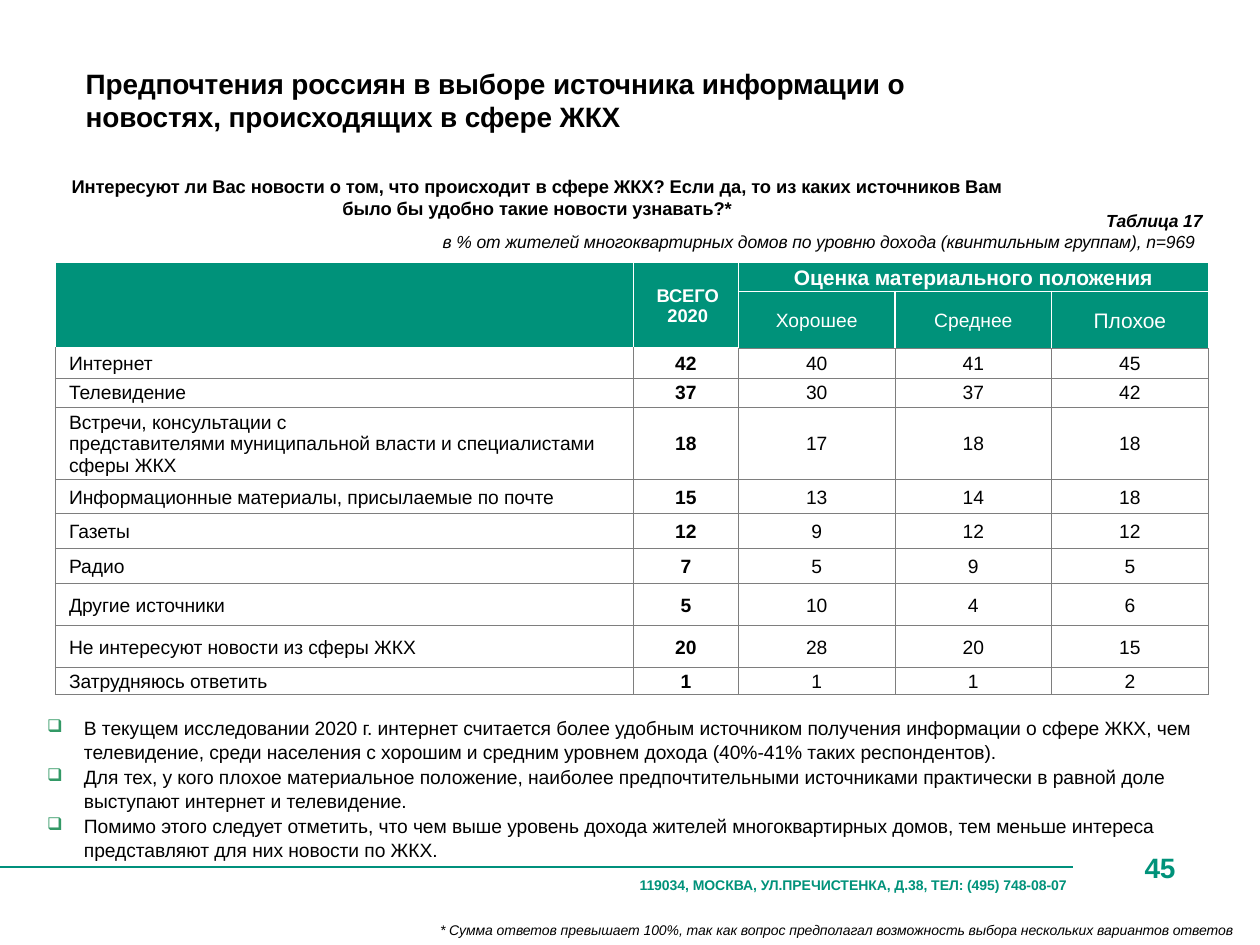
from lxml.etree import SubElement
from pptx import Presentation
from pptx.dml.color import RGBColor
from pptx.enum.shapes import MSO_CONNECTOR
from pptx.enum.text import MSO_ANCHOR as Anchor, PP_ALIGN as Align
from pptx.oxml.ns import qn
from pptx.util import Pt

COLORS = {
    "green": "00927A",
    "rule": "00907C",
    "bullet": "339966",
    "grid": "7E7E7E",
    "white": "FFFFFF",
    "black": "000000",
}
FONT = "Arial"
COLUMN_WIDTHS = [330.5, 60, 89.5, 89.5, 89.5]
HEADER_HEIGHTS = [16.5, 32.5]
INCOME_LEVELS = [("Хорошее", 11), ("Среднее", 11), ("Плохое", 12)]
# label lines, row height, values: total, good, average, bad
SOURCES = [
    (["Интернет"], 17, [42, 40, 41, 45]),
    (["Телевидение"], 16.5, [37, 30, 37, 42]),
    (["Встречи, консультации с",
      "представителями муниципальной власти и специалистами сферы ЖКХ"],
     41.5, [18, 17, 18, 18]),
    (["Информационные материалы, присылаемые по почте"], 19.5, [15, 13, 14, 18]),
    (["Газеты"], 20, [12, 9, 12, 12]),
    (["Радио"], 20, [7, 5, 9, 5]),
    (["Другие источники"], 24, [5, 10, 4, 6]),
    (["Не интересуют новости из сферы ЖКХ"], 24, [20, 28, 20, 15]),
    (["Затрудняюсь ответить"], 15.5, [1, 1, 1, 2]),
]
FINDINGS = [
    "В текущем исследовании 2020 г. интернет считается более удобным источником получения "
    "информации о сфере ЖКХ, чем телевидение, среди населения с хорошим и средним уровнем "
    "дохода (40%-41% таких респондентов).",
    "Для тех, у кого плохое материальное положение, наиболее предпочтительными источниками "
    "практически в равной доле выступают интернет и телевидение.",
    "Помимо этого следует отметить, что чем выше уровень дохода жителей многоквартирных "
    "домов, тем меньше интереса представляют для них новости по ЖКХ.",
]


def rgb(name):
    return RGBColor.from_string(COLORS[name])


def write(frame, lines, size, color="black", bold=False, italic=False,
          align=Align.LEFT, spacing=-5):
    """Fill a text frame, one paragraph a line; spacing is in hundredths of a point."""
    for index, line in enumerate(lines):
        paragraph = frame.paragraphs[0] if index == 0 else frame.add_paragraph()
        paragraph.alignment = align
        run = paragraph.add_run()
        run.text = line
        font = run.font
        font.name, font.size = FONT, Pt(size)
        font.bold, font.italic = bold, italic
        font.color.rgb = rgb(color)
        if spacing:
            run._r.get_or_add_rPr().set("spc", str(spacing))


def add_text(slide, box, lines, size, top_inset=0.9, **style):
    text_box = slide.shapes.add_textbox(*map(Pt, box))
    frame = text_box.text_frame
    frame.word_wrap = True
    frame.margin_left = frame.margin_right = frame.margin_bottom = 0
    frame.margin_top = Pt(top_inset)
    write(frame, lines, size, **style)
    return frame


def add_heading(slide, left, top):
    add_text(slide, (left + 13, top, 476, 40),
             ["Предпочтения россиян в выборе источника информации о новостях, "
              "происходящих в сфере ЖКХ"], 16, bold=True)
    add_text(slide, (left, top + 62, 542, 27),
             ["Интересуют ли Вас новости о том, что происходит в сфере ЖКХ? "
              "Если да, то из каких источников Вам",
              "было бы удобно такие новости узнавать?*"],
             10.5, bold=True, align=Align.CENTER, spacing=-3)
    add_text(slide, (left + 596, top + 82, 60, 13), ["Таблица 17"], 10,
             bold=True, italic=True)
    add_text(slide, (left + 217, top + 94, 440, 13),
             ["в % от жителей многоквартирных домов по уровню дохода "
              "(квинтильным группам), n=969"], 10, italic=True)


def set_borders(cell, sides):
    """Draw the borders given as {side: (colour, width in points)}."""
    properties = cell._tc.get_or_add_tcPr()
    for index, side in enumerate("LRTB"):
        color, width = sides[side]
        line = properties.makeelement(qn(f"a:ln{side}"), {"w": str(int(Pt(width)))})
        fill = SubElement(line, qn("a:solidFill"))
        SubElement(fill, qn("a:srgbClr"), val=COLORS[color])
        properties.insert(index, line)


def fill_cell(cell, lines, size, left=0, **style):
    cell.margin_left, cell.margin_top = Pt(left), Pt(1)
    cell.margin_right = cell.margin_bottom = 0
    cell.vertical_anchor = Anchor.MIDDLE
    write(cell.text_frame, lines, size, **style)


def add_source_table(slide, left, top):
    heights = HEADER_HEIGHTS + [height for _, height, _ in SOURCES]
    frame = slide.shapes.add_table(len(heights), len(COLUMN_WIDTHS), Pt(left), Pt(top),
                                   Pt(sum(COLUMN_WIDTHS)), Pt(sum(heights)))
    table = frame.table
    table.horz_banding = False
    for column, width in zip(table.columns, COLUMN_WIDTHS):
        column.width = Pt(width)
    for row, height in zip(table.rows, heights):
        row.height = Pt(height)

    white, grid = ("white", 1), ("grid", 0.25)
    for row_index, row in enumerate(table.rows):
        for cell in row.cells:
            cell.fill.solid()
            if row_index < len(HEADER_HEIGHTS):
                cell.fill.fore_color.rgb = rgb("green")
                set_borders(cell, {**dict.fromkeys("LRT", white),
                                   "B": grid if row_index else white})
            else:
                cell.fill.fore_color.rgb = rgb("white")
                set_borders(cell, dict.fromkeys("LRTB", grid))

    for column in (0, 1):
        table.cell(0, column).merge(table.cell(1, column))
    table.cell(0, 2).merge(table.cell(0, 4))
    header = {"color": "white", "align": Align.CENTER}
    fill_cell(table.cell(0, 0), [], 11)
    fill_cell(table.cell(0, 1), ["ВСЕГО", "2020"], 10.5, left=2, bold=True,
              spacing=0, **header)
    fill_cell(table.cell(0, 2), ["Оценка материального положения"], 12, bold=True, **header)
    for column, (level, size) in enumerate(INCOME_LEVELS, start=2):
        fill_cell(table.cell(1, column), [level], size, spacing=0, **header)

    for row, (label, _, values) in enumerate(SOURCES, start=len(HEADER_HEIGHTS)):
        fill_cell(table.cell(row, 0), label, 11, left=8)
        for column, value in enumerate(values, start=1):
            fill_cell(table.cell(row, column), [str(value)], 11, bold=column == 1,
                      align=Align.CENTER, spacing=0)


def add_findings(slide, left, top):
    frame = add_text(slide, (left, top, 660, 83), FINDINGS, 11)
    for index, paragraph in enumerate(frame.paragraphs):
        properties = paragraph._p.get_or_add_pPr()
        properties.set("marL", str(int(Pt(22))))
        properties.set("indent", str(int(Pt(-21))))
        color = SubElement(properties, qn("a:buClr"))
        SubElement(color, qn("a:srgbClr"), val=COLORS["bullet"])
        SubElement(properties, qn("a:buSzPct"), val="91000")
        SubElement(properties, qn("a:buChar"), char="❑")
        paragraph.line_spacing = Pt(13.8)
        if index:
            paragraph.space_before = Pt(0.4)


def add_footer(slide, top):
    rule = slide.shapes.add_connector(MSO_CONNECTOR.STRAIGHT, 0, Pt(top), Pt(613), Pt(top))
    rule.line.color.rgb = rgb("rule")
    rule.line.width = Pt(1.2)
    SubElement(rule._element.spPr, qn("a:effectLst"))
    add_text(slide, (654, top - 9.5, 24, 20), ["45"], 16, top_inset=0,
             color="green", bold=True)
    add_text(slide, (365.5, top + 5, 251, 11),
             ["119034, МОСКВА, УЛ.ПРЕЧИСТЕНКА, Д.38, ТЕЛ: (495) 748-08-07"], 8,
             top_inset=0.2, color="green", bold=True)
    add_text(slide, (251.5, top + 31, 463, 11),
             ["* Сумма ответов превышает 100%, так как вопрос предполагал возможность "
              "выбора нескольких вариантов ответов"], 8, top_inset=0.2, italic=True)


def main():
    presentation = Presentation()
    presentation.slide_width, presentation.slide_height = Pt(720), Pt(540)
    slide = presentation.slides.add_slide(presentation.slide_layouts[6])
    add_footer(slide, 495.5)
    add_heading(slide, 36, 37)
    add_findings(slide, 26, 408)
    add_source_table(slide, 31.5, 150)
    presentation.save("out.pptx")


if __name__ == "__main__":
    main()
